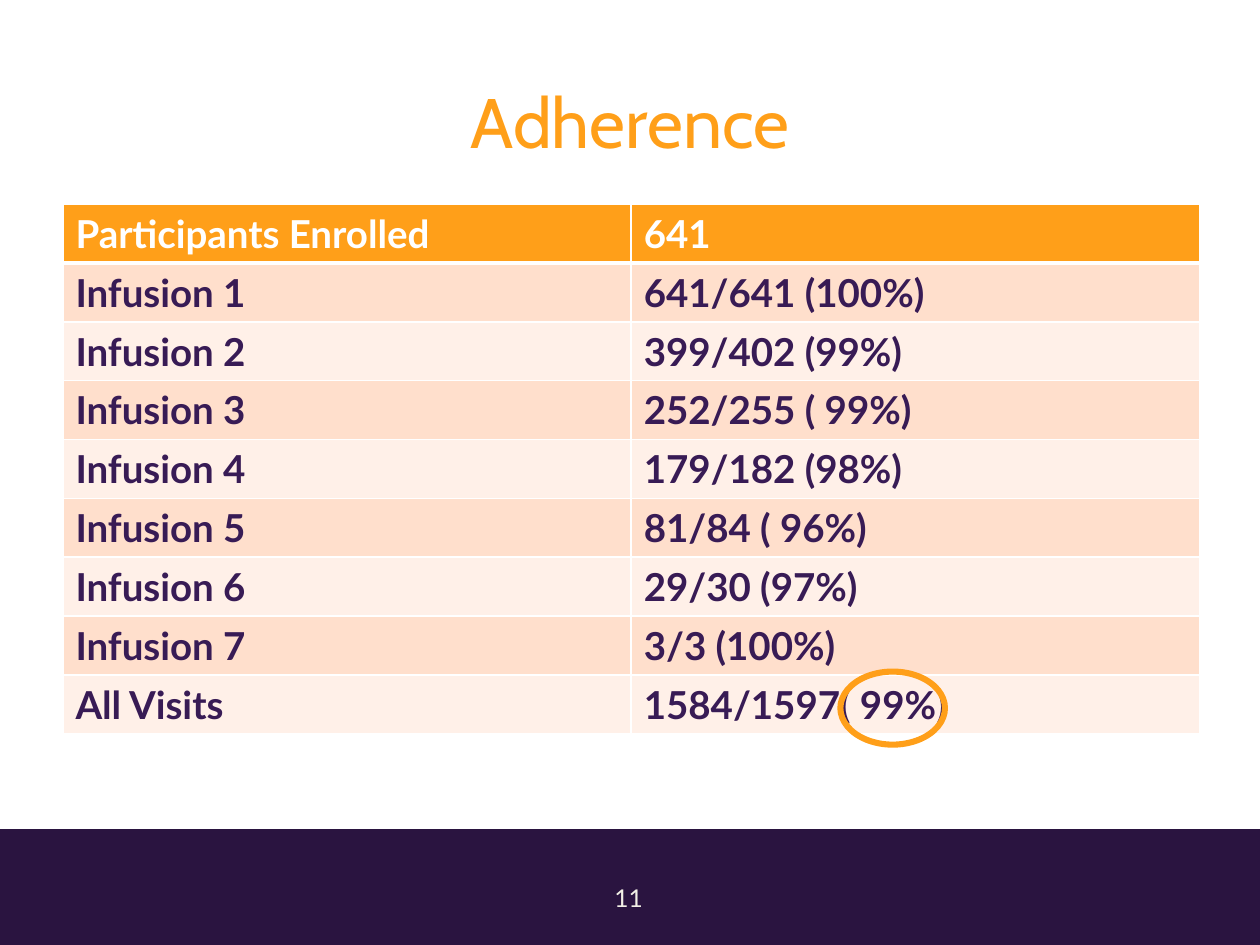
from dataclasses import dataclass

from lxml import etree
from pptx import Presentation
from pptx.dml.color import RGBColor
from pptx.enum.shapes import MSO_SHAPE
from pptx.enum.text import MSO_ANCHOR, PP_ALIGN
from pptx.oxml.ns import qn
from pptx.util import Inches, Pt

RECTANGLE, OVAL = MSO_SHAPE.RECTANGLE, MSO_SHAPE.OVAL
CENTER, MIDDLE = PP_ALIGN.CENTER, MSO_ANCHOR.MIDDLE
TITLE_ONLY = 5

TITLE = "Adherence"
PAGE_NUMBER = "11"
ROWS = [
    ("Participants Enrolled", "641"),
    ("Infusion 1", "641/641 (100%)"),
    ("Infusion 2", "399/402 (99%)"),
    ("Infusion 3", "252/255 ( 99%)"),
    ("Infusion 4", "179/182 (98%)"),
    ("Infusion 5", "81/84 ( 96%)"),
    ("Infusion 6", "29/30 (97%)"),
    ("Infusion 7", "3/3 (100%)"),
    ("All Visits", "1584/1597( 99%)"),
]

# left, top, width, height in inches
SLIDE_WIDTH, SLIDE_HEIGHT = 10, 7.5
FOOTER_HEIGHT = 0.92
FOOTER_BOX = (0, SLIDE_HEIGHT - FOOTER_HEIGHT, SLIDE_WIDTH, FOOTER_HEIGHT)
TITLE_BOX = (0.5, 0.33, 9, 1.25)
TABLE_BOX = (0.5, 1.62, 9.02, 4.2)
NUMBER_BOX = (4.55, 6.96, 0.88, 0.4)
HIGHLIGHT_BOX = (6.67, 5.33, 0.83, 0.58)


@dataclass(frozen=True)
class Theme:
    accent: str = "FF9F19"
    footer: str = "2A1440"
    text: str = "381B55"
    light: str = "FFFFFF"
    number: str = "F2F0E6"
    bands: tuple = ("FFF0E8", "FFDFCC")
    title_font: str = "Cabin"
    body_font: str = "Lato"
    title_size: float = 40
    table_size: float = 22
    number_size: float = 14
    border: float = 1
    header_border: float = 3
    highlight_line: float = 3.5


THEME = Theme()


def rgb(color):
    return RGBColor.from_string(color)


def inches(box):
    return [Inches(value) for value in box]


def write(text_frame, text, color, name, size, bold=False, alignment=None):
    text_frame.text = text
    paragraph = text_frame.paragraphs[0]
    paragraph.alignment = alignment
    font = paragraph.runs[0].font
    for attribute, value in {"name": name, "size": Pt(size), "bold": bold}.items():
        setattr(font, attribute, value)
    font.color.rgb = rgb(color)


def set_borders(cell, widths):
    """Draw cell borders; schema order puts them ahead of the fill."""
    properties = cell._tc.get_or_add_tcPr()
    for index, (side, width) in enumerate(widths.items()):
        line = etree.Element(qn(f"a:ln{side}"), w=str(Pt(width)))
        fill = etree.SubElement(line, qn("a:solidFill"))
        etree.SubElement(fill, qn("a:srgbClr"), val=THEME.light)
        properties.insert(index, line)


def add_footer(slide):
    footer = slide.shapes.add_shape(RECTANGLE, *inches(FOOTER_BOX))
    footer.shadow.inherit = False
    footer.fill.solid()
    footer.fill.fore_color.rgb = rgb(THEME.footer)
    footer.line.fill.background()


def add_title(slide):
    title = slide.shapes.title
    title.left, title.top, title.width, title.height = inches(TITLE_BOX)
    title.text_frame.vertical_anchor = MIDDLE
    write(title.text_frame, TITLE, THEME.accent, THEME.title_font,
          THEME.title_size, alignment=CENTER)


def add_adherence_table(slide):
    table = slide.shapes.add_table(len(ROWS), len(ROWS[0]), *inches(TABLE_BOX)).table
    for row_index, values in enumerate(ROWS):
        header = row_index == 0
        fill = THEME.accent if header else THEME.bands[row_index % 2]
        color = THEME.light if header else THEME.text
        top = THEME.header_border if row_index == 1 else THEME.border
        bottom = THEME.header_border if header else THEME.border
        widths = {"L": THEME.border, "R": THEME.border, "T": top, "B": bottom}
        for column_index, value in enumerate(values):
            cell = table.cell(row_index, column_index)
            cell.fill.solid()
            cell.fill.fore_color.rgb = rgb(fill)
            set_borders(cell, widths)
            write(cell.text_frame, value, color, THEME.body_font,
                  THEME.table_size, bold=True)


def add_page_number(slide):
    number = slide.shapes.add_textbox(*inches(NUMBER_BOX))
    number.text_frame.word_wrap = True
    write(number.text_frame, PAGE_NUMBER, THEME.number, THEME.body_font,
          THEME.number_size, alignment=CENTER)


def add_highlight(slide):
    highlight = slide.shapes.add_shape(OVAL, *inches(HIGHLIGHT_BOX))
    highlight.shadow.inherit = False
    highlight.fill.background()
    highlight.line.color.rgb = rgb(THEME.accent)
    highlight.line.width = Pt(THEME.highlight_line)


def main():
    presentation = Presentation()
    presentation.slide_width = Inches(SLIDE_WIDTH)
    presentation.slide_height = Inches(SLIDE_HEIGHT)
    slide = presentation.slides.add_slide(presentation.slide_layouts[TITLE_ONLY])
    for add_part in (add_footer, add_title, add_adherence_table,
                     add_page_number, add_highlight):
        add_part(slide)
    presentation.save("out.pptx")


if __name__ == "__main__":
    main()
